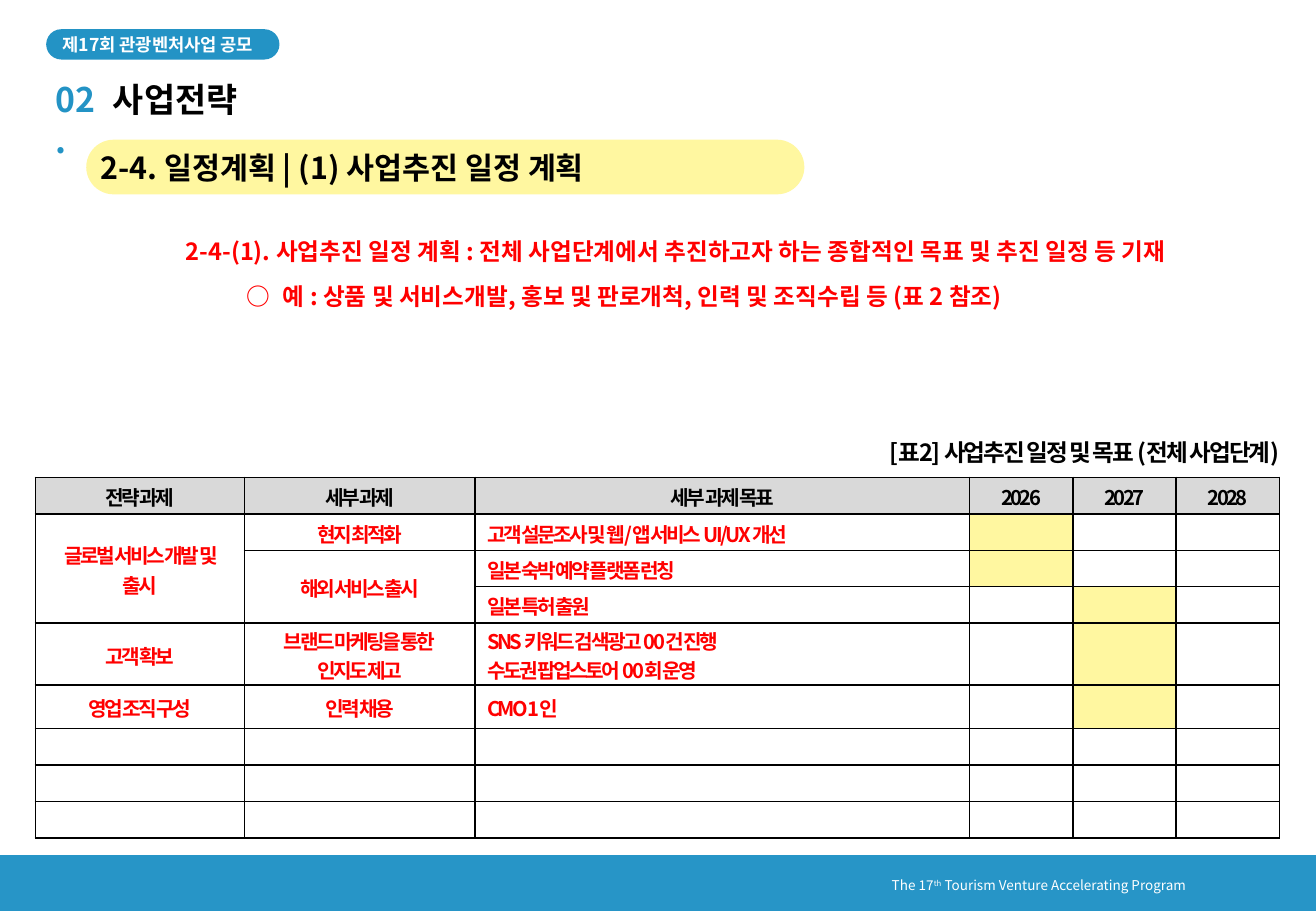
import pptx
import pptx.util
import pptx.dml.color
import pptx.enum.shapes
import pptx.enum.text
import pptx.oxml
import pptx.oxml.ns
import lxml.etree

Inches = pptx.util.Inches
Pt = pptx.util.Pt
RGBColor = pptx.dml.color.RGBColor
ALIGN = pptx.enum.text.PP_ALIGN
ANCHOR = pptx.enum.text.MSO_ANCHOR
SHAPE = pptx.enum.shapes.MSO_SHAPE
qn = pptx.oxml.ns.qn

FONT = "Noto Sans CJK KR"
BLUE = RGBColor(0x23, 0x93, 0xC5)
FOOTER_BLUE = RGBColor(0x27, 0x95, 0xC7)
YELLOW = RGBColor(0xFF, 0xF7, 0xA0)
GREY = RGBColor(0xD9, 0xD9, 0xD9)
RED = RGBColor(0xFF, 0x00, 0x00)
BLACK = RGBColor(0x00, 0x00, 0x00)
WHITE = RGBColor(0xFF, 0xFF, 0xFF)

COL_WIDTHS = [1.72, 1.9, 4.07, 0.85, 0.85, 0.85]
ROW_HEIGHTS = [0.3, 0.3, 0.3, 0.3, 0.51, 0.36, 0.3, 0.3, 0.3]
GOAL_COL = 2
SCHEDULE = [
    ["전략 과제", "세부 과제", "세부 과제 목표", "2026", "2027", "2028"],
    ["글로벌 서비스 개발 및 출시", "현지 최적화", "고객 설문조사 및 웹/앱 서비스 UI/UX 개선"],
    ["", "해외 서비스 출시", "일본 숙박 예약 플랫폼 런칭"],
    ["", "", "일본 특허 출원"],
    ["고객 확보", "브랜드 마케팅을 통한\n인지도 제고",
     "SNS 키워드 검색광고 00건 진행\n수도권 팝업스토어 00회 운영"],
    ["영업 조직 구성", "인력 채용", "CMO 1인"],
]
MERGES = [((1, 0), (3, 0)), ((2, 1), (3, 1))]
ACTIVE_YEARS = {(1, 3), (2, 3), (3, 4), (4, 4), (5, 4)}


class SlideBuilder:
    def __init__(self, prs):
        self.slide = prs.slides.add_slide(prs.slide_layouts[6])

    def run(self, p, text, size, color, bold=True, spacing=0, baseline=0):
        r = p.add_run()
        r.text = text
        r.font.size = Pt(size)
        r.font.bold = bold
        r.font.name = FONT
        r.font.color.rgb = color
        rPr = r._r.get_or_add_rPr()
        lxml.etree.SubElement(rPr, qn("a:ea")).set("typeface", FONT)
        if spacing:
            rPr.set("spc", str(round(spacing * 100)))
        if baseline:
            rPr.set("baseline", str(baseline * 1000))

    def text_box(self, left, top, width, height, inset=True):
        """Add an empty wrapping box and return its text frame."""
        box = self.slide.shapes.add_textbox(
            Inches(left), Inches(top), Inches(width), Inches(height))
        tf = box.text_frame
        tf.word_wrap = True
        tf.auto_size = pptx.enum.text.MSO_AUTO_SIZE.SHAPE_TO_FIT_TEXT
        if not inset:
            tf.margin_left = tf.margin_right = tf.margin_top = tf.margin_bottom = 0
        return tf

    def shape(self, kind, left, top, width, height, fill):
        sp = self.slide.shapes.add_shape(
            kind, Inches(left), Inches(top), Inches(width), Inches(height))
        sp.shadow.inherit = False
        sp.fill.solid()
        sp.fill.fore_color.rgb = fill
        sp.line.fill.background()
        return sp

    def pill(self, left, top, width, height, fill, text, size, color, align,
             margin_left=0, margin_right=0):
        sp = self.shape(SHAPE.ROUNDED_RECTANGLE, left, top, width, height, fill)
        sp.adjustments[0] = 0.5
        tf = sp.text_frame
        tf.word_wrap = True
        tf.vertical_anchor = ANCHOR.MIDDLE
        tf.margin_top = tf.margin_bottom = 0
        tf.margin_left = Inches(margin_left)
        tf.margin_right = Inches(margin_right)
        p = tf.paragraphs[0]
        p.alignment = align
        self.run(p, text, size, color)

    def heading(self, left, width, text, color):
        tf = self.text_box(left, 0.65, width, 0.34, inset=False)
        self.run(tf.paragraphs[0], text, 20, color)

    def guide(self, lines):
        """Add the red guidance lines, given as (text, level, left, hanging)."""
        tf = self.text_box(1.43, 1.76, 9.4, 0.8)
        for i, (text, level, left, hanging) in enumerate(lines):
            p = tf.add_paragraph() if i else tf.paragraphs[0]
            p.alignment = ALIGN.JUSTIFY
            p.level = level
            p.line_spacing = 1.6
            pPr = p._p.get_or_add_pPr()
            pPr.set("marL", str(Inches(left)))
            pPr.set("indent", str(-Inches(hanging)))
            self.run(p, text, 14, RED)

    def borders(self, cell):
        tcPr = cell._tc.get_or_add_tcPr()
        for i, side in enumerate(("lnL", "lnR", "lnT", "lnB")):
            tcPr.insert(i, pptx.oxml.parse_xml(
                f'<a:{side} {pptx.oxml.ns.nsdecls("a")} w="{Pt(1)}"><a:solidFill>'
                f'<a:srgbClr val="{BLACK}"/></a:solidFill></a:{side}>'))

    def cell(self, cell, text, fill, color, align):
        cell.margin_left = cell.margin_right = Inches(0.1)
        cell.margin_top = Inches(0.02)
        cell.margin_bottom = 0
        cell.vertical_anchor = ANCHOR.MIDDLE
        cell.fill.solid()
        cell.fill.fore_color.rgb = fill
        self.borders(cell)
        tf = cell.text_frame
        for i, line in enumerate(text.split("\n")):
            p = tf.add_paragraph() if i else tf.paragraphs[0]
            p.alignment = align
            if line:
                self.run(p, line, 12, color, spacing=-1.5)
            else:
                lxml.etree.SubElement(p._p, qn("a:endParaRPr")).set("sz", "1200")

    def schedule(self, left, top):
        table = self.slide.shapes.add_table(
            len(ROW_HEIGHTS), len(COL_WIDTHS), Inches(left), Inches(top),
            Inches(sum(COL_WIDTHS)), Inches(sum(ROW_HEIGHTS))).table
        for column, width in zip(table.columns, COL_WIDTHS):
            column.width = Inches(width)
        for i, height in enumerate(ROW_HEIGHTS):
            table.rows[i].height = Inches(height)
            texts = SCHEDULE[i] if i < len(SCHEDULE) else []
            for j in range(len(COL_WIDTHS)):
                text = texts[j] if j < len(texts) else ""
                header = i == 0
                fill = GREY if header else YELLOW if (i, j) in ACTIVE_YEARS else WHITE
                align = ALIGN.LEFT if j == GOAL_COL and not header else ALIGN.CENTER
                self.cell(table.cell(i, j), text, fill, BLACK if header else RED, align)
        for first, last in MERGES:
            table.cell(*first).merge(table.cell(*last))

    def footer(self):
        self.shape(SHAPE.RECTANGLE, 0, 7.04, 10.83, 0.46, FOOTER_BLUE)
        p = self.text_box(7.24, 7.17, 3.11, 0.24).paragraphs[0]
        for text, baseline in (("The 17", 0), ("th", 30),
                               (" Tourism Venture Accelerating Program", 0)):
            self.run(p, text, 8, WHITE, bold=False, baseline=baseline)


def main():
    prs = pptx.Presentation()
    prs.slide_width = Inches(10.83)
    prs.slide_height = Inches(7.5)
    s = SlideBuilder(prs)
    s.footer()
    s.heading(0.46, 0.35, "02.", BLUE)
    s.heading(0.93, 4.3, "사업전략", BLACK)
    s.pill(0.38, 0.24, 1.92, 0.25, BLUE, "제17회 관광벤처사업 공모", 10.5, WHITE,
           ALIGN.CENTER, margin_right=0.08)
    s.guide([
        ("2-4-(1). 사업추진 일정 계획 : 전체 사업단계에서 추진하고자 하는 "
         "종합적인 목표 및 추진 일정 등 기재", 0, 0.25, 0.25),
        ("○\t예 : 상품 및 서비스개발, 홍보 및 판로개척, 인력 및 조직수립 등 (표 2 참조)",
         1, 0.8, 0.3),
    ])
    s.pill(0.71, 1.15, 5.91, 0.45, YELLOW, "2-4. 일정계획 | (1) 사업추진 일정 계획",
           18, BLACK, ALIGN.LEFT, margin_left=0.05)
    p = s.text_box(0.53, 3.56, 10.1, 0.34).paragraphs[0]
    p.alignment = ALIGN.RIGHT
    s.run(p, "[표2] 사업추진 일정 및 목표 (전체 사업단계)", 14, BLACK, spacing=-1.2)
    s.schedule(0.29, 3.93)
    prs.save("out.pptx")


if __name__ == "__main__":
    main()
